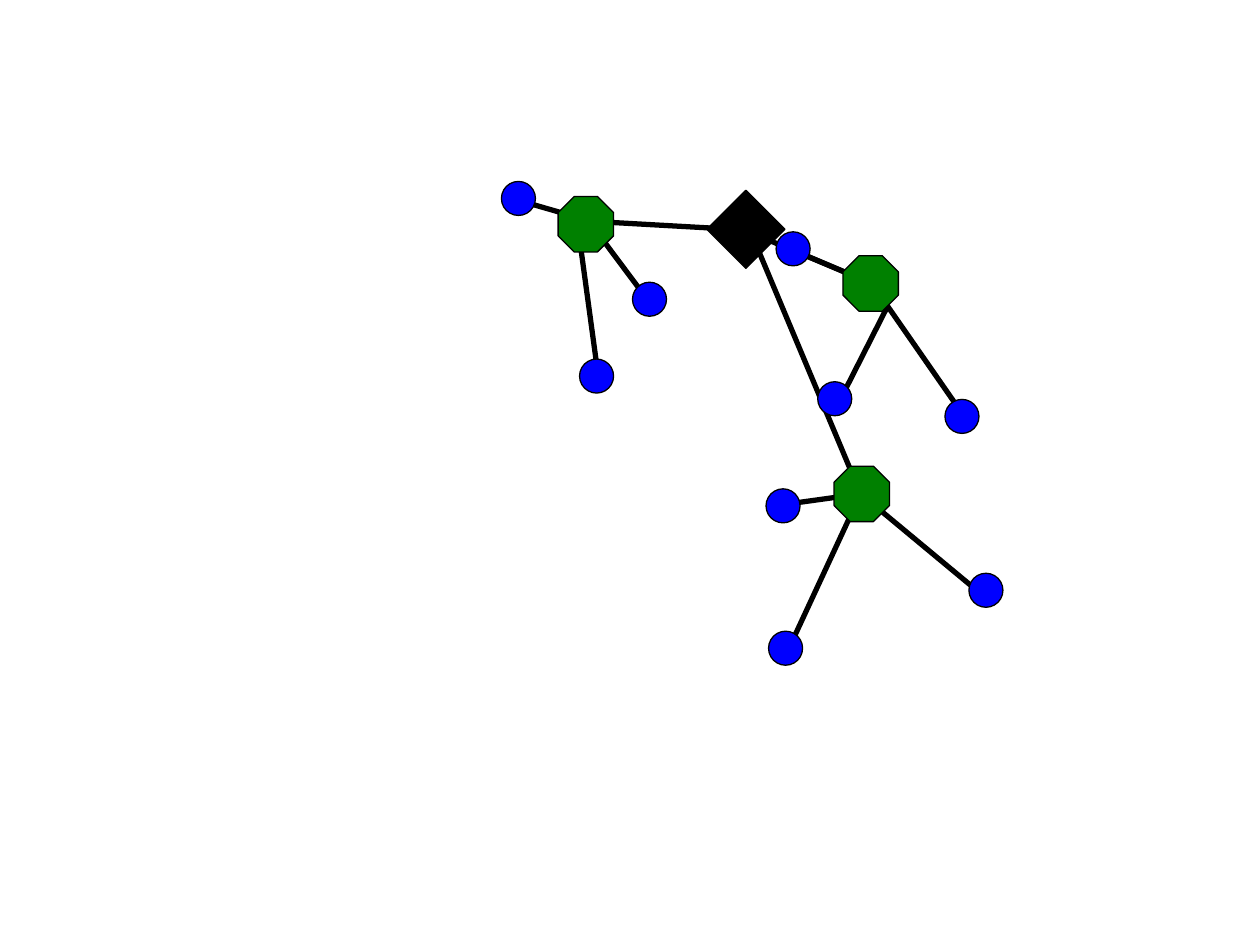
import pptx
import pptx.dml.color
import pptx.enum.shapes
import pptx.oxml
import pptx.oxml.ns
import pptx.util

Inches = pptx.util.Inches
Shape = pptx.enum.shapes.MSO_SHAPE

BLACK, GREEN, BLUE = "000000", "008000", "0000FF"
LEAF_SIZE, HUB_SIZE, ROOT_SIZE = 0.27, 0.44, 0.62

ROOT = (5.61, 1.51)
HUBS = [(4.43, 1.56), (6.69, 2.03), (6.62, 3.7)]
LEAVES = [
    (3.98, 1.44), (5.02, 2.24), (4.6, 2.85),
    (6.16, 1.84), (6.49, 3.03), (7.5, 3.17),
    (6.08, 3.88), (6.1, 5.01), (7.69, 4.55),
]
LINKS = [
    ((6.33, 2), (6.92, 2.25)),
    ((7.04, 2.44), (6.67, 3.17)),
    ((6.92, 2.25), (7.67, 3.33)),
    ((6.25, 4), (6.83, 3.92)),
    ((6.83, 3.92), (6.25, 5.17)),
    ((6.83, 3.92), (7.83, 4.75)),
    ((4.08, 1.58), (4.67, 1.75)),
    ((4.67, 1.75), (5.17, 2.42)),
    ((4.58, 1.75), (4.75, 3)),
    ((4.58, 1.75), (6, 1.83)),
    ((6.92, 2.25), (5.92, 1.83)),
    ((6.83, 3.92), (5.92, 1.75)),
]


def color(hex_code):
    return pptx.dml.color.RGBColor.from_string(hex_code)


class NetworkSlide:
    outline_width = 0.75
    link_width = 3

    def __init__(self, slide):
        self.shapes = slide.shapes

    def stroke(self, line, width):
        line.color.rgb = color(BLACK)
        line.width = pptx.util.Pt(width)

    def link(self, start, end):
        edge = self.shapes.add_connector(
            pptx.enum.shapes.MSO_CONNECTOR.STRAIGHT,
            *(Inches(value) for value in start + end))
        self.stroke(edge.line, self.link_width)
        properties = edge._element.spPr
        properties.append(pptx.oxml.parse_xml(
            f"<a:effectLst {pptx.oxml.ns.nsdecls('a')}/>"))

    def node(self, kind, corner, size, fill):
        marker = self.shapes.add_shape(
            kind, *(Inches(value) for value in corner + (size, size)))
        marker.shadow.inherit = False
        marker.fill.solid()
        marker.fill.fore_color.rgb = color(fill)
        self.stroke(marker.line, self.outline_width)
        return marker

    def root(self, corner):
        self.node(Shape.DIAMOND, corner, ROOT_SIZE, BLACK)

    def hub(self, corner):
        octagon = self.node(Shape.OCTAGON, corner, HUB_SIZE, GREEN)
        octagon.adjustments[0] = 0.29

    def leaf(self, corner):
        self.node(Shape.FLOWCHART_CONNECTOR, corner, LEAF_SIZE, BLUE)


def main():
    deck = pptx.Presentation()
    deck.slide_width, deck.slide_height = Inches(10), Inches(7.5)
    network = NetworkSlide(deck.slides.add_slide(deck.slide_layouts[6]))
    for start, end in LINKS:
        network.link(start, end)
    network.root(ROOT)
    for corner in HUBS:
        network.hub(corner)
    for corner in LEAVES:
        network.leaf(corner)
    deck.save("out.pptx")


if __name__ == "__main__":
    main()
